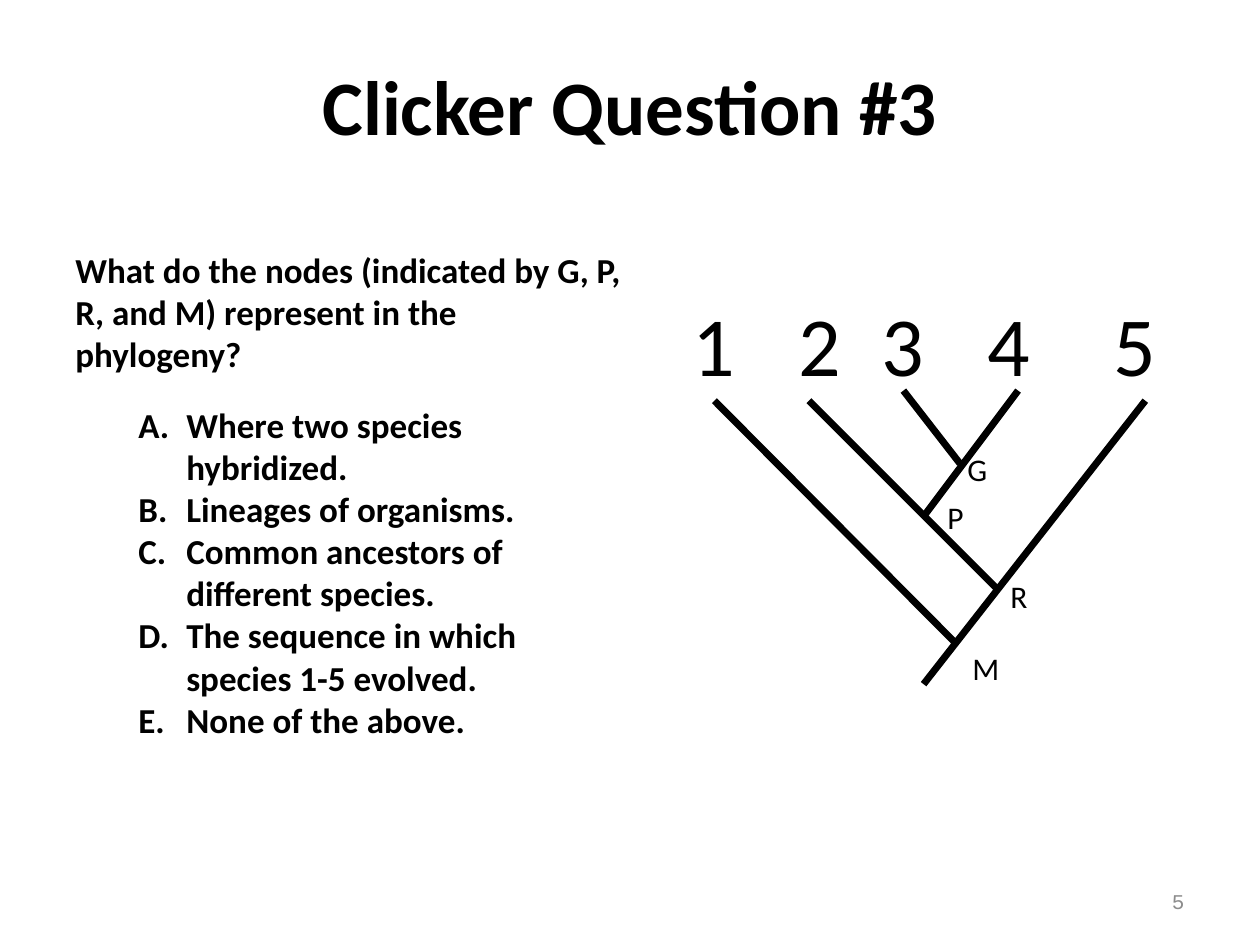
from lxml.etree import SubElement
from pptx import Presentation
from pptx.dml.color import RGBColor
from pptx.enum.shapes import MSO_CONNECTOR, MSO_SHAPE
from pptx.enum.text import MSO_ANCHOR, PP_ALIGN
from pptx.oxml.ns import qn
from pptx.util import Inches, Pt

COLORS = {"text": "000000", "background": "FFFFFF", "page": "8C8C8C"}


def style_text(shape, size, color="text", bold=False, font="Calibri",
               align=PP_ALIGN.LEFT, anchor=MSO_ANCHOR.TOP):
    frame = shape.text_frame
    frame.word_wrap = True
    frame.vertical_anchor = anchor
    for paragraph in frame.paragraphs:
        paragraph.alignment = align
        values = {"size": Pt(size), "bold": bold, "name": font}
        for run in paragraph.runs:
            for name, value in values.items():
                setattr(run.font, name, value)
            run.font.color.rgb = RGBColor.from_string(COLORS[color])


def add_label(text, left, top, width, height, size):
    """Add a white rectangle with left-aligned text."""
    shape = slide.shapes.add_shape(
        MSO_SHAPE.RECTANGLE, Inches(left), Inches(top), Inches(width), Inches(height))
    shape.shadow.inherit = False
    shape.fill.solid()
    shape.fill.fore_color.rgb = RGBColor.from_string(COLORS["background"])
    shape.line.fill.background()
    shape.text_frame.text = text
    style_text(shape, size)
    return shape


presentation = Presentation()
presentation.slide_width = Inches(10)
presentation.slide_height = Inches(7.5)
slide = presentation.slides.add_slide(presentation.slide_layouts[6])

# Question and lettered answers; \v is a line break within an answer
question = "What do the nodes (indicated by G, P, R, and M) represent in the phylogeny?"
answers = [
    "Where two species\vhybridized.",
    "Lineages of organisms.",
    "Common ancestors of\vdifferent species.",
    "The sequence in which\vspecies 1-5 evolved.",
    "None of the above.",
]
body = slide.shapes.add_textbox(Inches(0.5), Inches(1.92), Inches(4.58), Inches(4.14))
body.text_frame.text = "\n".join([question] + answers)
style_text(body, 20, bold=True)
body.text_frame.paragraphs[0].space_after = Pt(17)
for paragraph in body.text_frame.paragraphs[1:]:
    paragraph.level = 1
    properties = paragraph._p.get_or_add_pPr()
    properties.set("marL", str(Inches(0.88)))
    properties.set("indent", str(Inches(-0.38)))
    SubElement(properties, qn("a:buFont"), typeface="+mj-lt")
    SubElement(properties, qn("a:buAutoNum"), type="alphaUcPeriod")

title = slide.shapes.add_textbox(0, 0, Inches(10), Inches(1.67))
title.text_frame.text = "Clicker Question #3"
style_text(title, 44, bold=True, align=PP_ALIGN.CENTER, anchor=MSO_ANCHOR.MIDDLE)

# Species numbers, each centred on a tab stop above its branch
species = add_label("\t1\t2\t3\t4\t5", 5.25, 2.27, 4.25, 0.9, 48)
properties = species.text_frame.paragraphs[0]._p.get_or_add_pPr()
tab_list = SubElement(properties, qn("a:tabLst"))
for position in (0.32, 1.16, 1.82, 2.66, 3.66):
    SubElement(tab_list, qn("a:tab"), pos=str(Inches(position)), algn="ctr")

nodes = [("G", 7.58, 3.52, 0.5), ("P", 7.42, 3.9, 0.42),
         ("R", 7.92, 4.53, 0.5), ("M", 7.62, 5.1, 0.5)]
for letter, left, top, width in nodes:
    add_label(letter, left, top, width, 0.4, 18)

# Branches of the tree, from the root end to the tip
branches = [
    (7.33, 5.43, 9.09, 3.18),
    (7.92, 4.68, 6.42, 3.18),
    (7.33, 4.1, 8.08, 3.1),
    (7.62, 3.68, 7.17, 3.1),
    (7.58, 5.1, 5.67, 3.18),
]
for branch in branches:
    connector = slide.shapes.add_connector(
        MSO_CONNECTOR.STRAIGHT, *[Inches(value) for value in branch])
    connector.line.width = Pt(4)
    connector.line.color.rgb = RGBColor.from_string(COLORS["text"])
    SubElement(connector._element.spPr, qn("a:effectLst"))

page_number = slide.shapes.add_textbox(Inches(7.17), Inches(6.95), Inches(2.33), Inches(0.4))
page_number.text_frame.text = "5"
style_text(page_number, 12, "page", font="Courier New",
           align=PP_ALIGN.RIGHT, anchor=MSO_ANCHOR.MIDDLE)

presentation.save("out.pptx")
